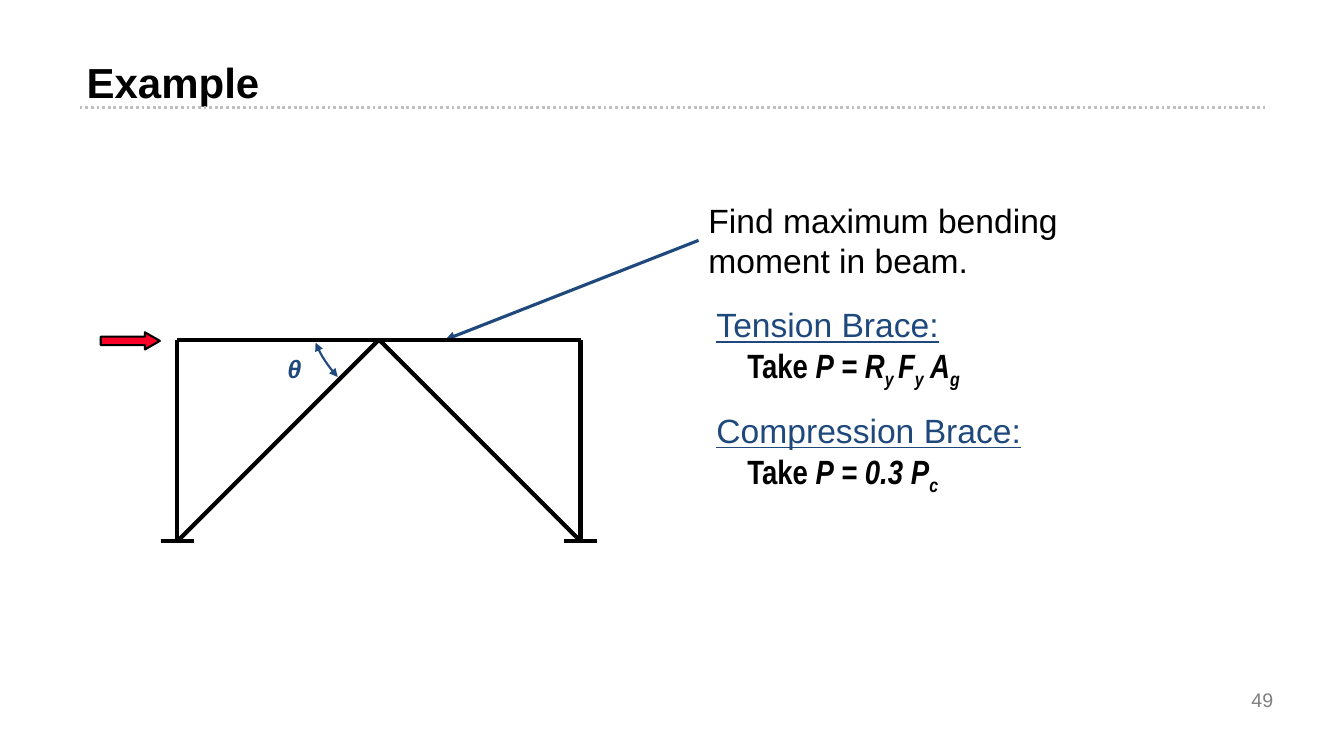
from dataclasses import dataclass

from pptx import Presentation
from pptx.dml.color import RGBColor as RGB
from pptx.enum.dml import MSO_LINE
from pptx.enum.shapes import MSO_CONNECTOR, MSO_SHAPE
from pptx.enum.text import MSO_ANCHOR as ANCHOR, MSO_AUTO_SIZE as FIT, PP_ALIGN as ALIGN
from pptx.oxml import parse_xml
from pptx.oxml.ns import nsdecls
from pptx.util import Pt

# Content: formula runs are (text, style)
TITLE = "Example"
PAGE_NUMBER = "49"
TASK = "Find maximum bending moment in beam."
ANGLE = "θ"
BRACES = [
    ("Tension Brace:", [("Take ", "bold"), ("P = R", "var"), ("y ", "sub"), ("F", "var"),
                        ("y", "sub"), (" A", "var"), ("g", "sub")]),
    ("Compression Brace:", [("Take ", "bold"), ("P = 0.3 P", "var"), ("c", "sub")]),
]


@dataclass(frozen=True)
class Theme:
    ink: RGB = RGB(0, 0, 0)
    accent: RGB = RGB(0x1F, 0x49, 0x7D)
    load: RGB = RGB(0xFC, 0x01, 0x28)
    rule: RGB = RGB(0xBF, 0xBF, 0xBF)
    muted: RGB = RGB(0x7F, 0x7F, 0x7F)
    font: str = "Arial"
    formula_font: str = "Arial Narrow"
    title: float = 30
    body: float = 24
    symbol: float = 18
    small: float = 14


THEME = Theme()

# Frame geometry: a beam on two columns, braces meeting at mid-span
BAY = 144
LEFT, EAVE = 126.72, 242.64
MIDDLE, RIGHT, BASE = LEFT + BAY, LEFT + 2 * BAY, EAVE + BAY
FOOT = 12
MEMBERS = [
    ((LEFT, BASE), (LEFT, EAVE)),
    ((RIGHT, BASE), (RIGHT, EAVE)),
    ((LEFT, EAVE), (MIDDLE, EAVE)),
    ((MIDDLE, EAVE), (RIGHT, EAVE)),
    ((LEFT, BASE), (MIDDLE, EAVE)),
    ((MIDDLE, EAVE), (RIGHT, BASE)),
] + [((x - FOOT, BASE), (x + FOOT, BASE)) for x in (LEFT, RIGHT)]
ANGLE_CURVE = [(241.2, 269.3), (234.7, 262.1), (229, 254), (225.4, 244.8)]
CURVE_STEPS = 8
BRACE_TOP, BRACE_PITCH = 213.84, 75.6
FORMULA_INDENT = 22


def format_font(font, **values):
    for name, value in values.items():
        if name == "color":
            font.color.rgb = value
        else:
            setattr(font, name, value)


def add_run(paragraph, text, **values):
    run = paragraph.add_run()
    run.text = text
    format_font(run.font, **{"name": THEME.font, "size": Pt(THEME.body),
                             "color": THEME.ink, **values})
    return run


def add_frame(left, top, width, height, **values):
    box = slide.shapes.add_textbox(Pt(left), Pt(top), Pt(width), Pt(height))
    for name, value in {"word_wrap": True, "auto_size": FIT.SHAPE_TO_FIT_TEXT, **values}.items():
        setattr(box.text_frame, name, value)
    return box


def style_line(line, color, width, ends=()):
    """Colour a line and put a triangle on each of its ends ("headEnd", "tailEnd")."""
    line.color.rgb = color
    line.width = Pt(width)
    for end in ends:
        line._get_or_add_ln().append(parse_xml(f'<a:{end} {nsdecls("a")} type="triangle"/>'))


def add_line(start, end, color, width, ends=()):
    line = slide.shapes.add_connector(MSO_CONNECTOR.STRAIGHT, *map(Pt, start + end))
    style_line(line.line, color, width, ends)
    line._element.spPr.append(parse_xml(f'<a:effectLst {nsdecls("a")}/>'))
    return line


def curve_point(controls, t):
    """Point on a cubic Bézier curve at t from 0 to 1."""
    weights = ((1 - t) ** 3, 3 * t * (1 - t) ** 2, 3 * t * t * (1 - t), t ** 3)
    return tuple(Pt(sum(w * p[axis] for w, p in zip(weights, controls))) for axis in (0, 1))


def add_heading():
    add_line((56.88, 77.04), (903.6, 77.04), THEME.rule, 2).line.dash_style = MSO_LINE.ROUND_DOT
    title = slide.shapes.title
    title.left, title.top, title.width, title.height = map(Pt, (54.72, 33.84, 861.84, 48.96))
    title.text_frame.vertical_anchor = ANCHOR.MIDDLE
    title.text_frame.auto_size = FIT.NONE
    paragraph = title.text_frame.paragraphs[0]
    paragraph.alignment = ALIGN.LEFT
    add_run(paragraph, TITLE, size=Pt(THEME.title), bold=True)

    number = add_frame(692.64, 485.28, 223.92, 28.8,
                       auto_size=FIT.NONE, vertical_anchor=ANCHOR.MIDDLE)
    paragraph = number.text_frame.paragraphs[0]
    paragraph.alignment = ALIGN.RIGHT
    add_run(paragraph, PAGE_NUMBER, size=Pt(THEME.small), color=THEME.muted)


def add_notes_beside_frame():
    task = add_frame(498.96, 138.96, 315.36, 65.52)
    add_run(task.text_frame.paragraphs[0], TASK)
    pointer = add_line((498.96, 171.72), (318.24, EAVE), THEME.accent, 2.25, ["tailEnd"])
    pointer.begin_connect(task, 1)

    for row, (heading, formula) in enumerate(BRACES):
        frame = add_frame(504.72, BRACE_TOP + row * BRACE_PITCH, 240.48, 65.52).text_frame
        add_run(frame.paragraphs[0], heading, color=THEME.accent, underline=True)
        line = frame.add_paragraph()
        line._p.get_or_add_pPr().set("marL", str(Pt(FORMULA_INDENT)))
        for text, style in formula:
            run = add_run(line, text, name=THEME.formula_font, bold=True, italic=style != "bold")
            if style == "sub":
                run.font._element.set("baseline", "-25000")


def add_braced_frame():
    for start, end in MEMBERS:
        add_line(start, end, THEME.ink, 3)

    points = [curve_point(ANGLE_CURVE, i / CURVE_STEPS) for i in range(CURVE_STEPS + 1)]
    builder = slide.shapes.build_freeform(*points[0])
    builder.add_line_segments(points[1:], close=False)
    arc = builder.convert_to_shape()
    arc.shadow.inherit = False
    arc.fill.background()
    style_line(arc.line, THEME.accent, 1.5, ["headEnd", "tailEnd"])

    paragraph = add_frame(177.12, 249.12, 66.24, 28.8).text_frame.paragraphs[0]
    paragraph.alignment = ALIGN.CENTER
    add_run(paragraph, ANGLE, size=Pt(THEME.symbol), color=THEME.accent, bold=True, italic=True)

    load = slide.shapes.add_shape(MSO_SHAPE.RIGHT_ARROW, *map(Pt, (72, 237.4, 42.2, 12.24)))
    load.adjustments[0], load.adjustments[1] = 0.5, 0.875
    load.shadow.inherit = False
    load.fill.solid()
    load.fill.fore_color.rgb = THEME.load
    style_line(load.line, THEME.ink, 1.5)


deck = Presentation()
deck.slide_width, deck.slide_height = Pt(960), Pt(540)
slide = deck.slides.add_slide(deck.slide_layouts[5])
add_heading()
add_notes_beside_frame()
add_braced_frame()
deck.save("out.pptx")
